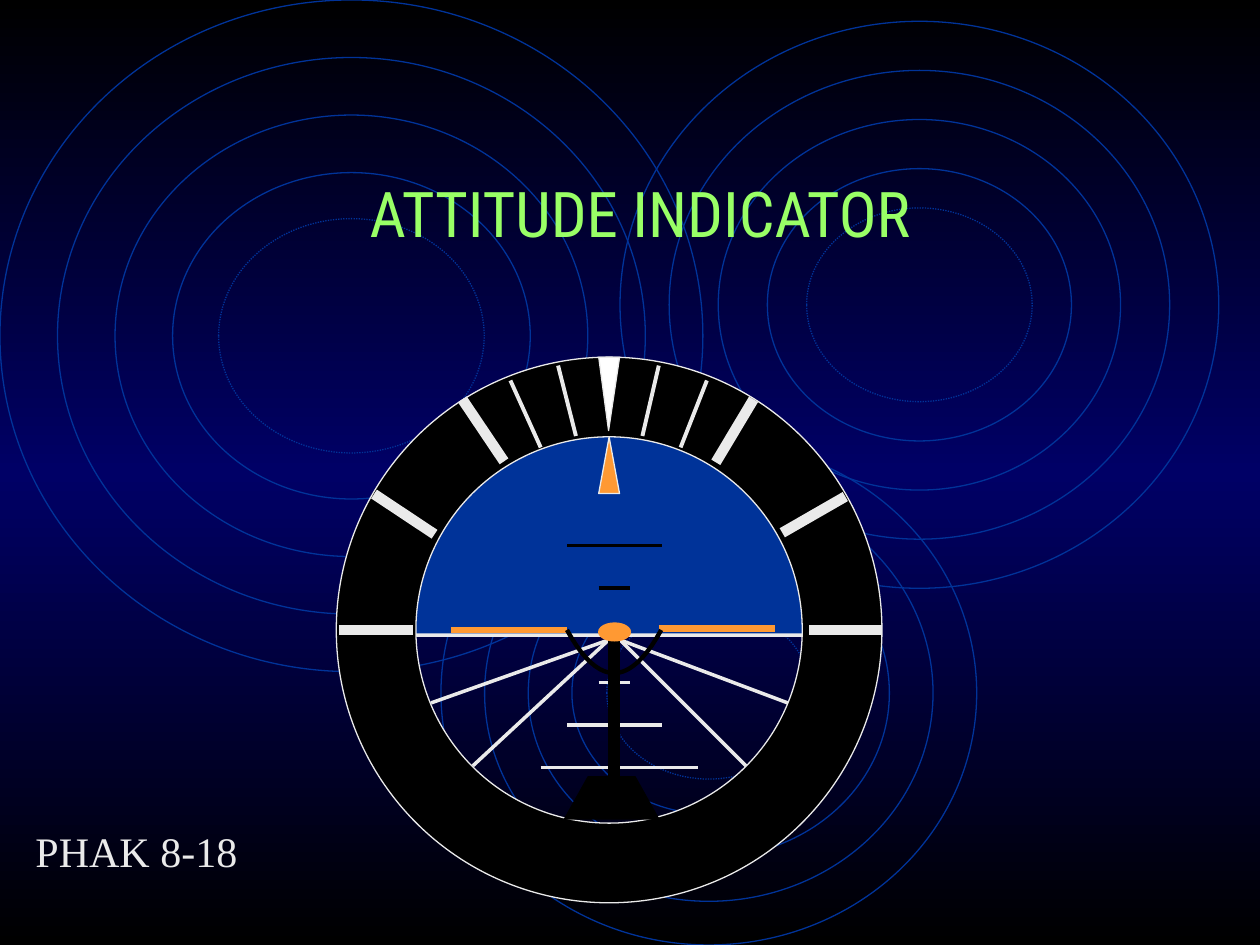
import copy
from pptx import Presentation
from pptx.dml.color import RGBColor
from pptx.enum import dml, shapes, text
from pptx.oxml import ns, xmlchemy
from pptx.util import Cm, Pt

BLACK = RGBColor(0x00, 0x00, 0x00)
NAVY = RGBColor(0x00, 0x00, 0x66)
BLUE = RGBColor(0x00, 0x33, 0x99)
WHITE = RGBColor(0xFF, 0xFF, 0xFF)
PALE = RGBColor(0xEA, 0xEA, 0xEA)
ORANGE = RGBColor(0xFF, 0x99, 0x33)
GREEN = RGBColor(0x99, 0xFF, 0x66)
SHAPE = shapes.MSO_SHAPE

prs = Presentation()
prs.slide_width, prs.slide_height = Cm(25.4), Cm(19.05)
s = prs.slides.add_slide(prs.slide_layouts[6])


def add_text(content, box, font, size, color, wrap=True):
    tf = s.shapes.add_textbox(*map(Cm, box)).text_frame
    tf.word_wrap = wrap
    p = tf.paragraphs[0]
    p.alignment = text.PP_ALIGN.CENTER
    r = p.add_run()
    r.text = content
    r.font.name, r.font.size = font, Pt(size)
    r.font.color.rgb = color


def add_shape(kind, box, fill, line, width=0.75, adj=()):
    sp = s.shapes.add_shape(kind, *map(Cm, box))
    sp.shadow.inherit = False
    if fill is None:
        sp.fill.background()
    else:
        sp.fill.solid()
        sp.fill.fore_color.rgb = fill
    sp.line.color.rgb = line
    sp.line.width = Pt(width)
    for i, value in enumerate(adj):
        sp.adjustments[i] = value
    return sp


bg = s.background.fill
bg.gradient()
bg.gradient_angle = 90
stops = s.background._cSld.find(".//" + ns.qn("a:gsLst"))
stops.append(copy.deepcopy(stops[0]))
for stop, position, color in zip(bg.gradient_stops, (0, 0.5, 1), (BLACK, NAVY, BLACK)):
    stop.position = position
    stop.color.rgb = color

ripples = [
    (0, 0, 14.17, 13.54, 1.16),
    (8.89, 8.89, 10.8, 10.16, 0.88),
    (12.5, 0.43, 12.07, 11.43, 0.99),
]
for x, y, w, h, step in ripples:
    for n in (0, 1, 2, 3, 3.8):
        d = n * step
        sp = add_shape(SHAPE.OVAL, (x + d, y + d, w - 2 * d, h - 2 * d), None, BLUE)
        if n == 3.8:
            sp.line.dash_style = dml.MSO_LINE.ROUND_DOT

add_text("ATTITUDE INDICATOR", (1.9, 3.39, 22.01, 3.18), "Roboto Condensed", 36, GREEN, wrap=False)

add_shape(SHAPE.CHORD, (7.62, 7.83, 9.53, 9.95), BLUE, PALE, 2, (108, 0))
add_shape(SHAPE.DONUT, (6.78, 7.2, 11, 11), BLACK, PALE, adj=(0.146,))
sp = add_shape(SHAPE.ISOSCELES_TRIANGLE, (12.07, 7.2, 0.42, 1.48), WHITE, PALE, adj=(0.53,))
sp.rotation = 180
add_shape(SHAPE.ISOSCELES_TRIANGLE, (12.07, 8.81, 0.42, 1.14), ORANGE, PALE)

line_sets = [
    (PALE, 6, [
        (16.31, 12.7, 17.78, 12.7), (6.83, 12.7, 8.33, 12.7),
        (15.77, 10.74, 17.04, 10.01), (14.43, 9.32, 15.19, 8.05),
        (7.54, 9.96, 8.76, 10.77), (9.32, 8.05, 10.16, 9.3),
    ]),
    (PALE, 2.25, [
        (12.95, 8.79, 13.28, 7.37), (11.61, 8.79, 11.25, 7.37),
        (13.72, 9.02, 14.25, 7.67), (10.9, 9.02, 10.29, 7.67),
    ]),
    (BLACK, 2, [(11.43, 11, 13.34, 11), (12.07, 11.85, 12.7, 11.85)]),
    (PALE, 2, [
        (12.27, 12.9, 8.69, 14.17), (12.5, 12.9, 15.88, 14.17),
        (12.5, 12.9, 15.04, 15.44), (12.27, 12.9, 9.53, 15.44),
        (12.07, 13.76, 12.7, 13.76), (11.43, 14.61, 13.34, 14.61),
        (10.9, 15.47, 14.07, 15.47),
    ]),
    (ORANGE, 3.5, [(9.09, 12.7, 11.43, 12.7), (13.28, 12.67, 15.62, 12.67)]),
]
for color, width, lines in line_sets:
    for ends in lines:
        c = s.shapes.add_connector(shapes.MSO_CONNECTOR.STRAIGHT, *map(Cm, ends))
        c.line.color.rgb = color
        c.line.width = Pt(width)
        c._element.spPr.append(xmlchemy.OxmlElement("a:effectLst"))

yoke = []
for i in range(-10, 11):
    t = i / 10
    yoke.append((Cm(12.38 + 0.95 * t), Cm(12.7 + 0.87 * (1 - t * t))))
fb = s.shapes.build_freeform(*yoke[0])
fb.add_line_segments(yoke[1:], close=False)
sp = fb.convert_to_shape()
sp.shadow.inherit = False
sp.fill.background()
sp.line.color.rgb = BLACK
sp.line.width = Pt(2.5)

add_shape(SHAPE.TRAPEZOID, (11.38, 15.66, 1.9, 0.85), BLACK, BLACK, adj=(0.56,))
add_shape(SHAPE.RECTANGLE, (12.28, 12.9, 0.21, 2.75), BLACK, BLACK)
add_shape(SHAPE.OVAL, (12.07, 12.56, 0.64, 0.36), ORANGE, ORANGE)

add_text("PHAK 8-18", (0, 16.51, 5.5, 1.27), "Times New Roman", 24, PALE)

prs.save("out.pptx")
